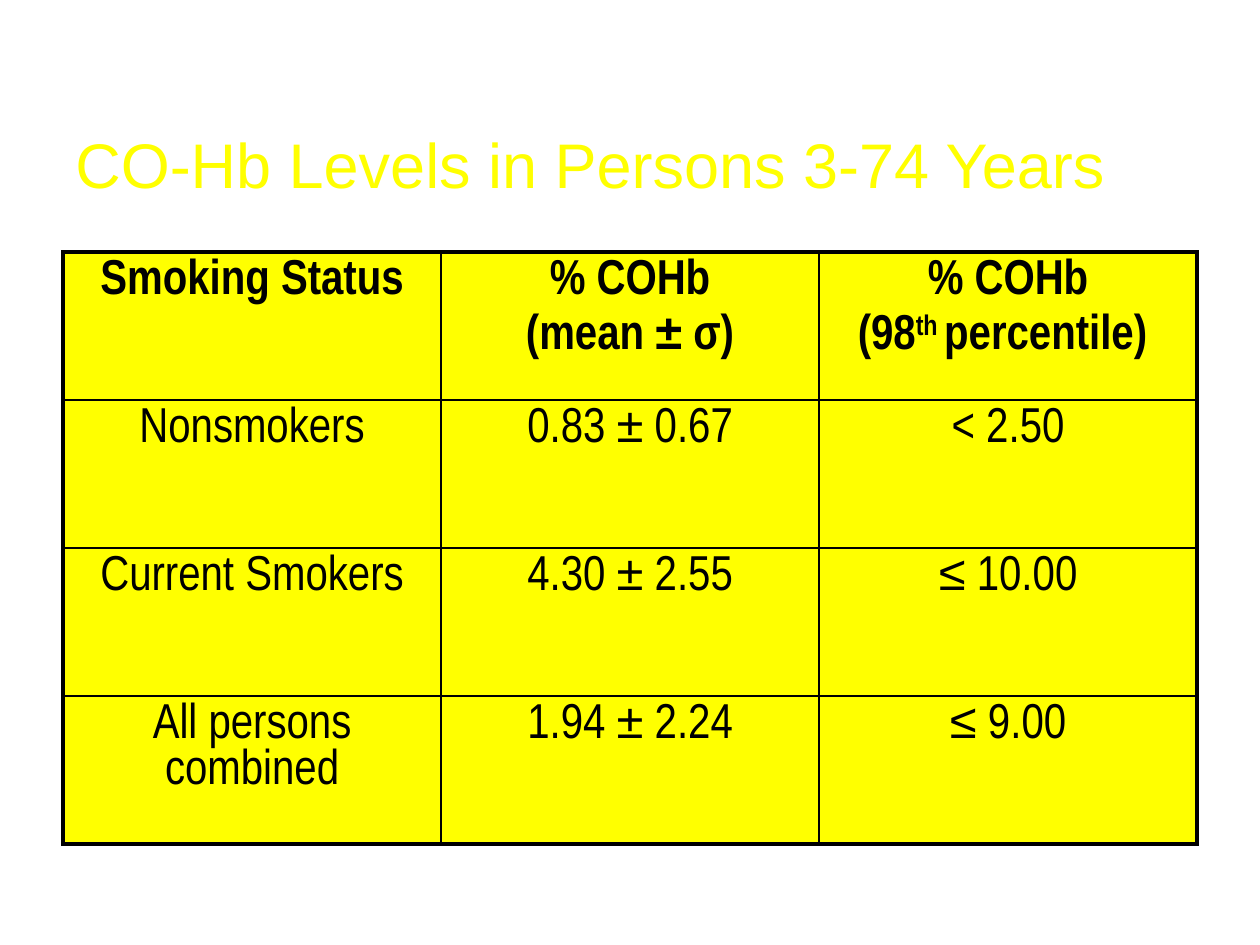
from lxml.etree import SubElement
from pptx import Presentation
from pptx.dml.color import RGBColor as Rgb
from pptx.enum.text import MSO_ANCHOR as Anchor, PP_ALIGN as Align
from pptx.oxml import parse_xml
from pptx.oxml.ns import qn
from pptx.util import Inches, Pt

BLACK, YELLOW = "000000", "FFFF00"
THIN, THICK = Pt(1), Pt(2.25)
DRAWING = 'xmlns:a="http://schemas.openxmlformats.org/drawingml/2006/main"'


def add_span(para, text, face, size, color, bold=False):
    span = para.add_run()
    span.text = text
    span.font.name, span.font.size, span.font.bold = face, Pt(size), bold
    span.font.color.rgb = Rgb.from_string(color)
    return span


def add_border(cell, side, width):
    line = SubElement(cell._tc.get_or_add_tcPr(), qn("a:ln" + side), w=str(width))
    fill = SubElement(line, qn("a:solidFill"))
    SubElement(fill, qn("a:srgbClr"), val=BLACK)


deck = Presentation()
deck.slide_width, deck.slide_height = Inches(10), Inches(7.5)
page = deck.slides.add_slide(deck.slide_layouts[6])
margin = Inches(0.5)
content_width = deck.slide_width - 2 * margin

# Title with a text shadow
title = page.shapes.add_textbox(margin, Inches(0.67), content_width, Inches(1.25))
frame = title.text_frame
frame.word_wrap = True
frame.vertical_anchor = Anchor.MIDDLE
span = add_span(frame.paragraphs[0], "CO-Hb Levels in Persons 3-74 Years", "Arial", 36, YELLOW)
shadow = parse_xml(
    f'<a:effectLst {DRAWING}><a:outerShdw dist="35921" dir="2700000">'
    f'<a:srgbClr val="{BLACK}"/></a:outerShdw></a:effectLst>'
)
span.font.fill._xPr.find(qn("a:solidFill")).addnext(shadow)

# Each cell is a list of paragraphs, each paragraph a list of runs
rows = [
    [[["Smoking Status"]], [["% COHb"], ["(mean ± σ)"]],
     [["% COHb"], ["(98", "th ", "percentile) "]]],
    [[["Nonsmokers"]], [["0.83 ± 0.67"]], [["< 2.50"]]],
    [[["Current Smokers"]], [["4.30 ± 2.55"]], [["≤ 10.00"]]],
    [[["All persons combined"]], [["1.94 ± 2.24"]], [["≤ 9.00"]]],
]
last_row, last_column = len(rows) - 1, len(rows[0]) - 1
table = page.shapes.add_table(
    len(rows), len(rows[0]), margin, Inches(2), content_width, Inches(4.7)
).table
table.first_row = table.horz_banding = False

for r, row in enumerate(rows):
    for c, paragraphs in enumerate(row):
        cell = table.cell(r, c)
        outer_edges = {"L": c == 0, "R": c == last_column, "T": r == 0, "B": r == last_row}
        for side, is_outer in outer_edges.items():
            add_border(cell, side, THICK if is_outer else THIN)
        cell.fill.solid()
        cell.fill.fore_color.rgb = Rgb.from_string(YELLOW)
        for index, texts in enumerate(paragraphs):
            frame = cell.text_frame
            para = frame.add_paragraph() if index else frame.paragraphs[0]
            para.alignment = Align.CENTER
            if index:
                para.space_before = Pt(5.6)
            for text in texts:
                span = add_span(para, text, "Arial Narrow", 28, BLACK, bold=r == 0)
                if text == "th ":
                    span._r.get_or_add_rPr().set("baseline", "30000")

deck.save("out.pptx")
